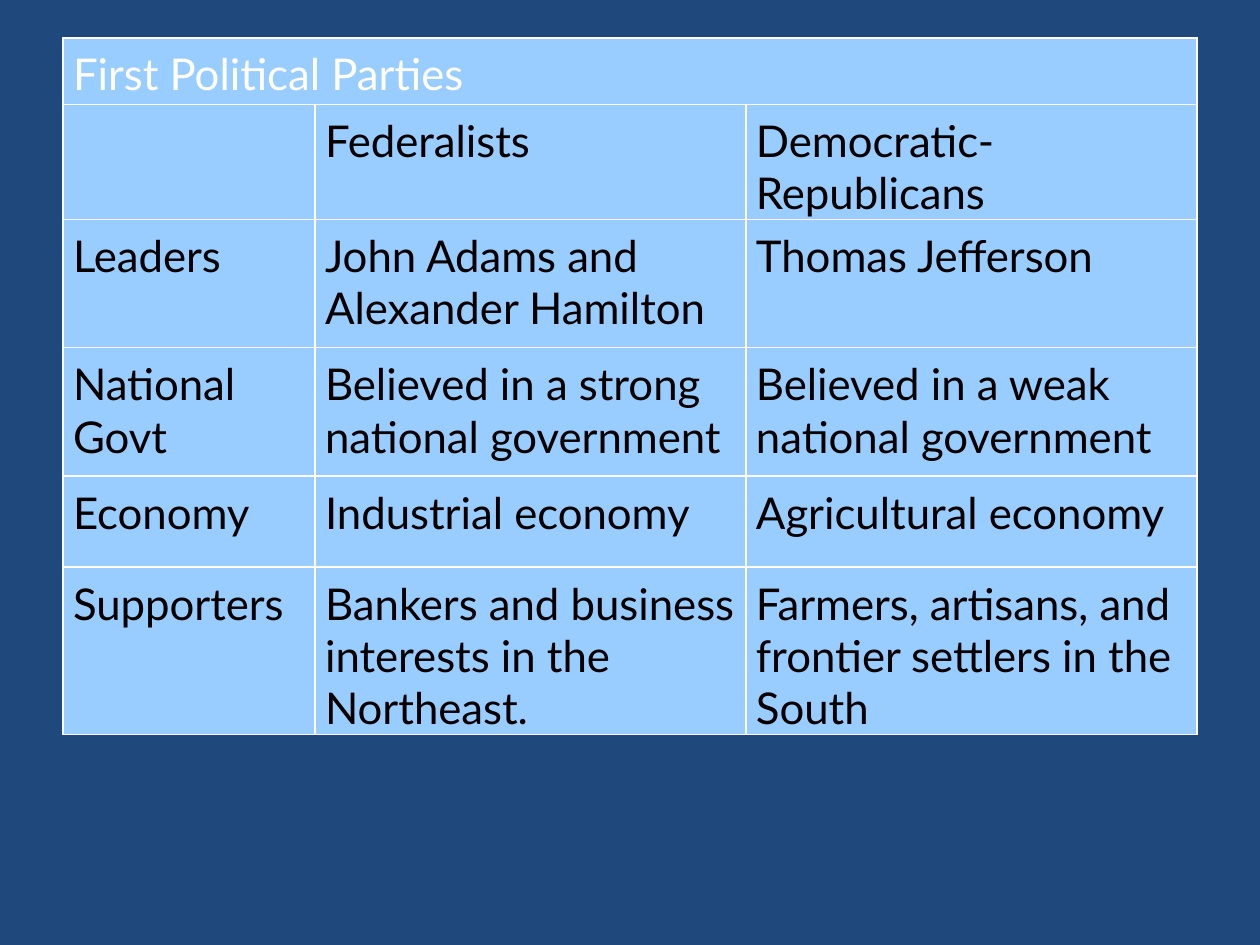
import pptx
import pptx.dml.color
import pptx.oxml
import pptx.oxml.ns
import pptx.util

Inches = pptx.util.Inches
Pt = pptx.util.Pt
RGBColor = pptx.dml.color.RGBColor

NAVY = RGBColor(0x1F, 0x49, 0x7D)
SKY = RGBColor(0x99, 0xCC, 0xFF)
WHITE = RGBColor(0xFF, 0xFF, 0xFF)
BLACK = RGBColor(0x00, 0x00, 0x00)

TITLE = "First Political Parties"
PARTIES = [
    ("", "Federalists", "Democratic-Republicans"),
    ("Leaders", "John Adams and Alexander Hamilton", "Thomas Jefferson"),
    ("National Govt", "Believed in a strong national government",
     "Believed in a weak national government"),
    ("Economy", "Industrial economy", "Agricultural economy"),
    ("Supporters", "Bankers and business interests in the Northeast.",
     "Farmers, artisans, and frontier settlers in the South"),
]
COLUMN_WIDTHS = [2, 3.42, 3.58]
ROW_HEIGHTS = [0.53, 0.91, 1.02, 1.02, 0.72, 1.33]


def write_text(frame, text, *, font, size, color, space_after=0):
    paragraph = frame.paragraphs[0]
    paragraph.space_after = Pt(space_after)
    span = paragraph.add_run()
    span.text = text
    span.font.name = font
    span.font.size = Pt(size)
    span.font.bold = False
    span.font.color.rgb = color


def set_borders(cell, color, width):
    """Draw all four sides; call before filling, as the schema puts lines first."""
    properties = cell._tc.get_or_add_tcPr()
    for side in ("lnL", "lnR", "lnT", "lnB"):
        properties.append(pptx.oxml.parse_xml(
            f'<a:{side} {pptx.oxml.ns.nsdecls("a")} w="{Pt(width)}">'
            f'<a:solidFill><a:srgbClr val="{color}"/></a:solidFill></a:{side}>'))


class SlideBuilder:
    """Holds the style and the current slide."""

    font = "Lato"
    size = 25

    def __init__(self, deck):
        self.page = deck.slides.add_slide(deck.slide_layouts.get_by_name("Blank"))

    def background(self, color):
        fill = self.page.background.fill
        fill.solid()
        fill.fore_color.rgb = color

    def cell(self, cell, text, color):
        cell.margin_left = cell.margin_right = Inches(0.08)
        cell.margin_top = Inches(0.08)
        cell.margin_bottom = 0
        set_borders(cell, WHITE, 1)
        cell.fill.solid()
        cell.fill.fore_color.rgb = SKY
        if text:
            write_text(cell.text_frame, text, font=self.font, size=self.size,
                       color=color, space_after=2.9)

    def table(self, left, top, widths, heights, title, rows):
        """Add a table whose first row is one merged title cell."""
        table = self.page.shapes.add_table(
            len(heights), len(widths), Inches(left), Inches(top),
            Inches(sum(widths)), Inches(sum(heights))).table
        table.first_row = table.horz_banding = False
        for column, width in zip(table.columns, widths):
            column.width = Inches(width)
        for row, height in zip(table.rows, heights):
            row.height = Inches(height)
        table.cell(0, 0).merge(table.cell(0, len(widths) - 1))
        title_row = [title] + [""] * (len(widths) - 1)
        for r, texts in enumerate([title_row, *rows]):
            for c, text in enumerate(texts):
                self.cell(table.cell(r, c), text, BLACK if r else WHITE)


def main():
    deck = pptx.Presentation()
    deck.slide_width = Inches(10)
    deck.slide_height = Inches(7.5)
    builder = SlideBuilder(deck)
    builder.background(NAVY)
    builder.table(0.5, 0.3, COLUMN_WIDTHS, ROW_HEIGHTS, TITLE, PARTIES)
    deck.save("out.pptx")


if __name__ == "__main__":
    main()
